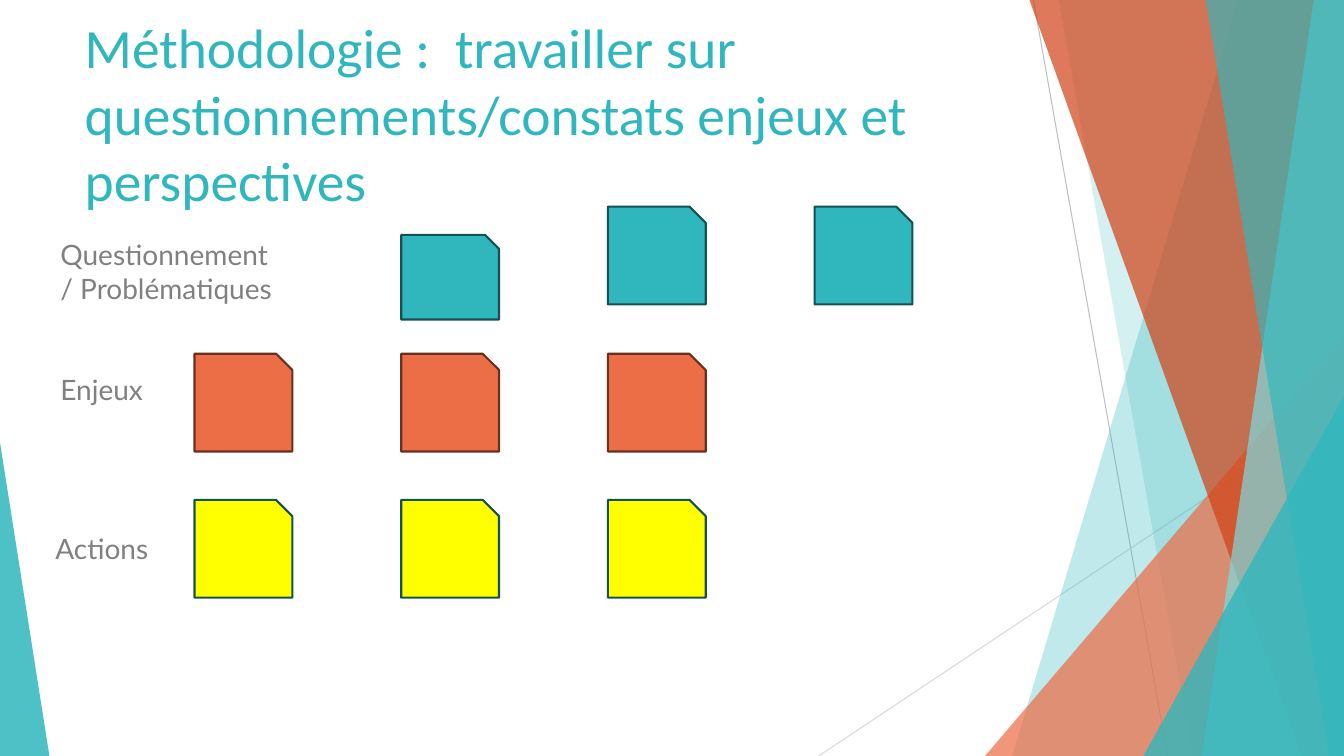
from dataclasses import dataclass

from lxml.etree import SubElement
from pptx import Presentation
from pptx.dml.color import RGBColor
from pptx.enum.shapes import MSO_CONNECTOR, MSO_SHAPE
from pptx.enum.text import MSO_ANCHOR, MSO_AUTO_SIZE, PP_ALIGN
from pptx.oxml.ns import qn
from pptx.util import Inches, Pt

WIDE, HIGH = 13.33, 7.5


@dataclass(frozen=True)
class Theme:
    teal: str = "30B7BD"
    pale: str = "7CDADE"
    deep: str = "155053"
    coral: str = "EC6E47"
    rust: str = "D14216"
    brown: str = "67301F"
    yellow: str = "FFFF00"
    grey: str = "808080"
    silver: str = "BFBFBF"
    mist: str = "D9D9D9"
    head: float = 39.6
    body: float = 20
    thin: float = 0.75
    edge: float = 1.5
    title: str = "Calibri"
    label: str = "Lato"


class Board:
    def __init__(self, slide, theme):
        self.slide = slide
        self.shapes = slide.shapes
        self.theme = theme

    def paint(self, shape, color, alpha=100):
        shape.shadow.inherit = False
        shape.fill.solid()
        shape.fill.fore_color.rgb = RGBColor.from_string(color)
        shape.line.fill.background()
        if alpha < 100:
            props = shape._element.spPr
            tint = props.find(qn("a:solidFill"))[0]
            SubElement(tint, qn("a:alpha")).set("val", str(alpha * 1000))

    def line(self, start, end, color):
        ends = [Inches(v) for v in (*start, *end)]
        wire = self.shapes.add_connector(MSO_CONNECTOR.STRAIGHT, *ends)
        wire.line.color.rgb = RGBColor.from_string(color)
        wire.line.width = Pt(self.theme.thin)
        SubElement(wire._element.spPr, qn("a:effectLst"))

    def band(self, top, foot, color, alpha):
        """Fill from a slanted left side to the right edge of the slide."""
        pen = self.shapes.build_freeform(Inches(top), 0, 1.0)
        points = [(WIDE, 0), (WIDE, HIGH), (foot, HIGH)]
        pen.add_line_segments([(Inches(x), Inches(y)) for x, y in points])
        self.paint(pen.convert_to_shape(), color, alpha)

    def wedge(self, left, top, width, peak, color, alpha):
        """Triangle that stands on the bottom edge of the slide."""
        box = [Inches(v) for v in (left, top, width, HIGH - top)]
        shape = self.shapes.add_shape(MSO_SHAPE.ISOSCELES_TRIANGLE, *box)
        shape.adjustments[0] = peak
        self.paint(shape, color, alpha)

    def card(self, left, top, height, color, edge):
        box = [Inches(v) for v in (left, top, 0.97, height)]
        shape = self.shapes.add_shape(MSO_SHAPE.SNIP_1_RECTANGLE, *box)
        self.paint(shape, color)
        shape.line.color.rgb = RGBColor.from_string(edge)
        shape.line.width = Pt(self.theme.edge)

    def words(self, shape, text, font, size, color, anchor):
        frame = shape.text_frame
        frame.word_wrap = True
        frame.auto_size = MSO_AUTO_SIZE.NONE
        frame.vertical_anchor = anchor
        para = frame.paragraphs[0]
        para.alignment = PP_ALIGN.LEFT
        run = para.add_run()
        run.text = text
        run.font.name = font
        run.font.size = Pt(size)
        run.font.color.rgb = RGBColor.from_string(color)
        return para

    def title(self, text):
        look, shape = self.theme, self.shapes.title
        shape.left, shape.top = Inches(0.74), Inches(1.04)
        shape.width, shape.height = Inches(9.4), Inches(1.12)
        self.words(shape, text, look.title, look.head, look.teal,
                   MSO_ANCHOR.BOTTOM)

    def label(self, text, left, top, height):
        look = self.theme
        box = [Inches(v) for v in (left, top, 2.41, height)]
        para = self.words(self.shapes.add_textbox(*box), text, look.label,
                          look.body, look.grey, MSO_ANCHOR.TOP)
        para.space_before = Pt(10)


def main():
    deck = Presentation()
    deck.slide_width, deck.slide_height = Inches(WIDE), Inches(HIGH)
    look = Theme()
    board = Board(deck.slides.add_slide(deck.slide_layouts[5]), look)

    # Slanted backdrop, from back to front
    board.line((10.25, 0), (11.58, HIGH), look.silver)
    board.line((WIDE, 4.03), (8.12, HIGH), look.mist)
    board.band(12.28, 10.04, look.teal, 30)
    board.band(10.5, 11.83, look.teal, 20)
    board.wedge(9.77, 3.33, 3.56, 1, look.coral, 72)
    board.band(10.21, 12.91, look.rust, 70)
    board.band(13.03, 11.92, look.pale, 70)
    board.band(11.96, 13.18, look.teal, 65)
    board.wedge(11.34, 3.93, 1.99, 1, look.teal, 80)
    board.wedge(0, 4.39, 0.49, 0, look.teal, 85)

    # Title
    board.title("Méthodologie :  travailler sur "
                "questionnements/constats enjeux et perspectives")

    # Row labels
    board.label("Questionnement / Problématiques", 0.5, 2.31, 0.71)
    board.label("Enjeux", 0.5, 3.65, 0.94)
    board.label("Actions", 0.45, 5.22, 0.94)

    # Cards on a grid of four columns
    cols = [1.93 + 2.05 * n for n in range(4)]
    board.card(cols[1], 2.33, 0.84, look.teal, look.deep)
    rows = [
        (cols[2:], 2.05, look.teal, look.deep),
        (cols[:3], 3.51, look.coral, look.brown),
        (cols[:3], 4.96, look.yellow, look.deep),
    ]
    for places, top, color, edge in rows:
        for left in places:
            board.card(left, top, 0.97, color, edge)

    deck.save("out.pptx")


if __name__ == "__main__":
    main()
